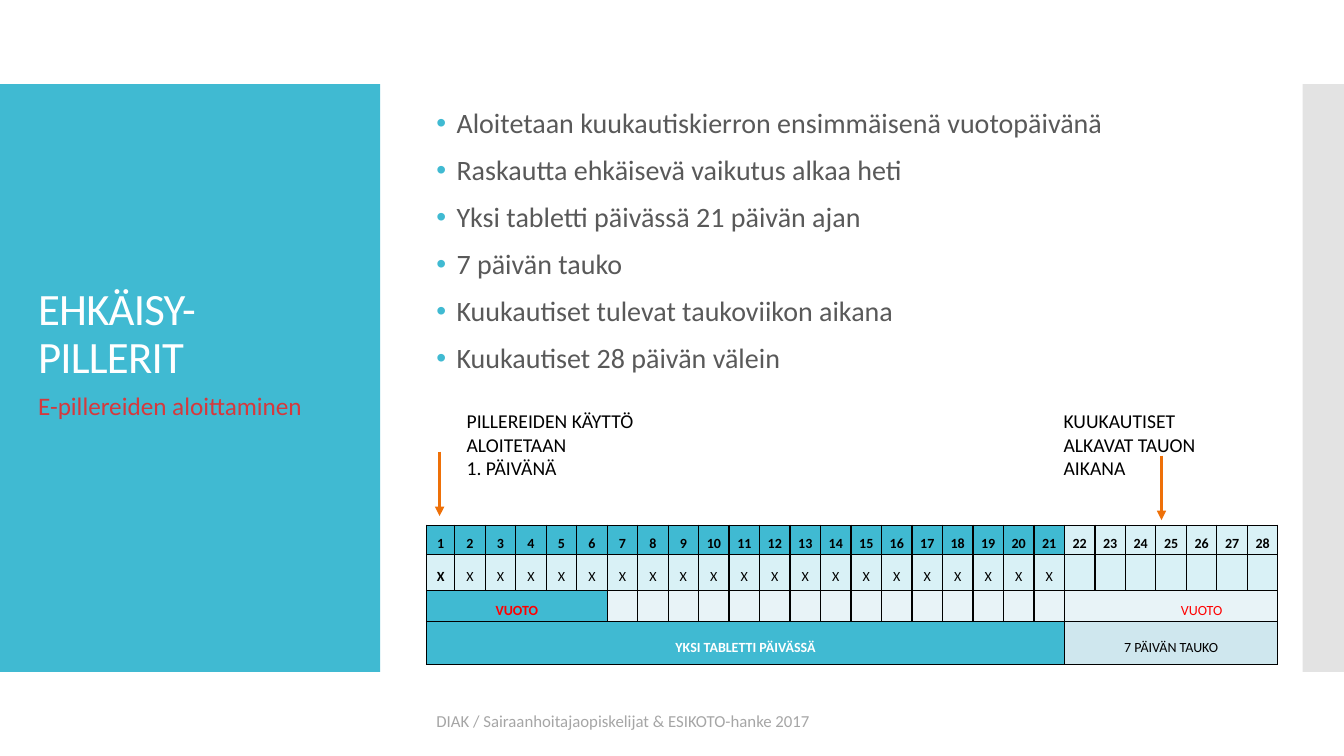
from lxml import etree
from pptx import Presentation, util as u
from pptx.dml.color import RGBColor
from pptx.enum import shapes, text
from pptx.oxml.ns import qn

W, H = 13.33, 7.5
DAYS, PILL_DAYS, BLEED_DAYS = 28, 21, 6
COLORS = {
    "teal": "40BAD2", "pale": "D9F1F6", "mist": "E8F3F7", "pause": "CFE7EE",
    "grey": "C8C8C8", "body": "595959", "footer": "A6A6A6", "subtitle": "D5393D",
    "red": "FF0000", "orange": "EE7008", "black": "000000", "white": "FFFFFF",
}
ALIGN, ANCHOR = text.PP_ALIGN, text.MSO_ANCHOR


def rgb(name):
    return RGBColor.from_string(COLORS[name])


def sub(parent, tag, **attrs):
    return etree.SubElement(parent, qn(tag), **attrs)


def write(tf, content, size=14, color="black", bold=False, align=None, line=None,
          before=0, bullet=None, spacing=None):
    """Write one paragraph for each line of content."""
    for i, words in enumerate(content.split("\n")):
        p = tf.paragraphs[0] if i == 0 else tf.add_paragraph()
        if bullet:
            pPr = p._p.get_or_add_pPr()
            pPr.set("marL", str(u.Inches(0.2)))
            pPr.set("indent", str(-u.Inches(0.2)))
            sub(sub(pPr, "a:buClr"), "a:srgbClr", val=COLORS[bullet])
            sub(pPr, "a:buFont", typeface="Arial")
            sub(pPr, "a:buChar", char="•")
        if align is not None:
            p.alignment = align
        if line:
            p.line_spacing = line
        if before and i:
            p.space_before = u.Pt(before)
        r = p.add_run()
        r.text = words
        r.font.name, r.font.size, r.font.bold = "Calibri", u.Pt(size), bold
        r.font.color.rgb = rgb(color)
        if spacing:
            r._r.get_or_add_rPr().set("spc", str(spacing))


def text_box(s, box, content, anchor=ANCHOR.TOP, wrap=True, **fmt):
    tf = s.shapes.add_textbox(*map(u.Inches, box)).text_frame
    tf.word_wrap, tf.vertical_anchor = wrap, anchor
    write(tf, content, **fmt)


def panel(s, box, color, alpha=None):
    sp = s.shapes.add_shape(shapes.MSO_SHAPE.RECTANGLE, *map(u.Inches, box))
    sp.shadow.inherit = False
    sp.fill.solid()
    sp.fill.fore_color.rgb = rgb(color)
    sp.line.fill.background()
    if alpha:
        clr = sp._element.spPr.find(qn("a:solidFill"))[0]
        sub(clr, "a:alpha", val=str(alpha * 1000))


def down_arrow(s, x, y, length):
    c = s.shapes.add_connector(shapes.MSO_CONNECTOR.STRAIGHT,
                               *map(u.Inches, (x, y, x, y + length)))
    c.line.color.rgb, c.line.width = rgb("orange"), u.Pt(2.25)
    sub(c.line._get_or_add_ln(), "a:tailEnd", type="triangle")
    sub(c._element.spPr, "a:effectLst")


def title_panel(s, x, y, w, h):
    panel(s, (x, y, w, h), "teal")
    left, width = x + 0.28, w - 0.67
    text_box(s, (left, y + 0.42, width, 2.6), "EHKÄISY-PILLERIT", ANCHOR.BOTTOM,
             size=32, color="white", line=0.9, spacing=-60)
    text_box(s, (left, y + 2.99, width, 2.54), "E-pillereiden aloittaminen",
             size=18, color="subtitle")


def style_cell(cell, fill, open_sides=""):
    """Set margins, black borders (none on the open sides) and fill."""
    cell.margin_left = cell.margin_right = u.Inches(0.07)
    cell.margin_top = cell.margin_bottom = 0
    cell.vertical_anchor = ANCHOR.MIDDLE
    tcPr = cell._tc.get_or_add_tcPr()
    for side in "LRTB":
        ln = sub(tcPr, "a:ln" + side, w=str(u.Pt(1)))
        if side in open_sides:
            sub(ln, "a:noFill")
        else:
            sub(sub(ln, "a:solidFill"), "a:srgbClr", val=COLORS["black"])
    cell.fill.solid()
    cell.fill.fore_color.rgb = rgb(fill)


def cycle_table(s, x, y, w, heights, first_col=0.28):
    tbl = s.shapes.add_table(len(heights), DAYS,
                             *map(u.Inches, (x, y, w, sum(heights)))).table
    tbl.first_row = tbl.horz_banding = False
    for i, col in enumerate(tbl.columns):
        col.width = u.Inches(first_col if i == 0 else (w - first_col) / (DAYS - 1))
    for row, height in zip(tbl.rows, heights):
        row.height = u.Inches(height)

    def put(row, col, content, fill, span=1, open_sides="", **fmt):
        for c in range(col, col + span):
            style_cell(tbl.cell(row, c), fill, open_sides)
        cell = tbl.cell(row, col)
        if span > 1:
            cell.merge(tbl.cell(row, col + span - 1))
        if content:
            write(cell.text_frame, content, size=10, align=ALIGN.CENTER, line=1.5, **fmt)

    for d in range(DAYS):
        pill = d < PILL_DAYS
        put(0, d, str(d + 1), "teal" if pill else "pale", bold=True)
        put(1, d, "X" if pill else "", "pale", bold=d == 0)
    put(2, 0, "VUOTO", "teal", BLEED_DAYS, color="red", bold=True)
    for d in range(BLEED_DAYS, PILL_DAYS):
        put(2, d, "", "mist")
    put(2, PILL_DAYS, "", "mist", open_sides="R")
    put(2, PILL_DAYS + 1, "", "mist", open_sides="LR")
    put(2, PILL_DAYS + 2, "VUOTO", "mist", DAYS - PILL_DAYS - 2, "L", color="red")
    put(3, 0, "YKSI TABLETTI PÄIVÄSSÄ", "teal", PILL_DAYS, color="white", bold=True)
    put(3, PILL_DAYS, "7 PÄIVÄN TAUKO", "pause", DAYS - PILL_DAYS)


def content_area(s, x, y, w):
    text_box(s, (x, y, w, 2.9),
             "Aloitetaan kuukautiskierron ensimmäisenä vuotopäivänä\n"
             "Raskautta ehkäisevä vaikutus alkaa heti\n"
             "Yksi tabletti päivässä 21 päivän ajan\n"
             "7 päivän tauko\n"
             "Kuukautiset tulevat taukoviikon aikana\n"
             "Kuukautiset 28 päivän välein",
             ANCHOR.MIDDLE, size=20, color="body", line=0.9, before=12, bullet="teal")
    cycle_table(s, x, y + 4.26, 8.45, (0.29, 0.36, 0.31, 0.42))
    label_y = y + 3.06
    text_box(s, (x + 0.3, label_y, 1.91, 1.04), "PILLEREIDEN KÄYTTÖ ALOITETAAN\n1. PÄIVÄNÄ")
    text_box(s, (x + 6.22, label_y, 1.91, 0.81), "KUUKAUTISET ALKAVAT TAUON AIKANA")
    down_arrow(s, x + 0.13, label_y + 0.47, 0.64)
    down_arrow(s, x + 7.29, label_y + 0.51, 0.64)


def main():
    prs = Presentation()
    prs.slide_width, prs.slide_height = u.Inches(W), u.Inches(H)
    s = prs.slides.add_slide(prs.slide_layouts[6])
    band_y, band_h = H / 9, H * 7 / 9
    title_panel(s, 0, band_y, 3.77, band_h)
    panel(s, (W - 0.41, band_y, 0.41, band_h), "grey", alpha=50)
    content_area(s, 4.23, 0.95, 8.54)
    text_box(s, (4.23, 7, 4.04, 0.3), "DIAK / Sairaanhoitajaopiskelijat & ESIKOTO-hanke 2017",
             wrap=False, size=12, color="footer")
    prs.save("out.pptx")


if __name__ == "__main__":
    main()
